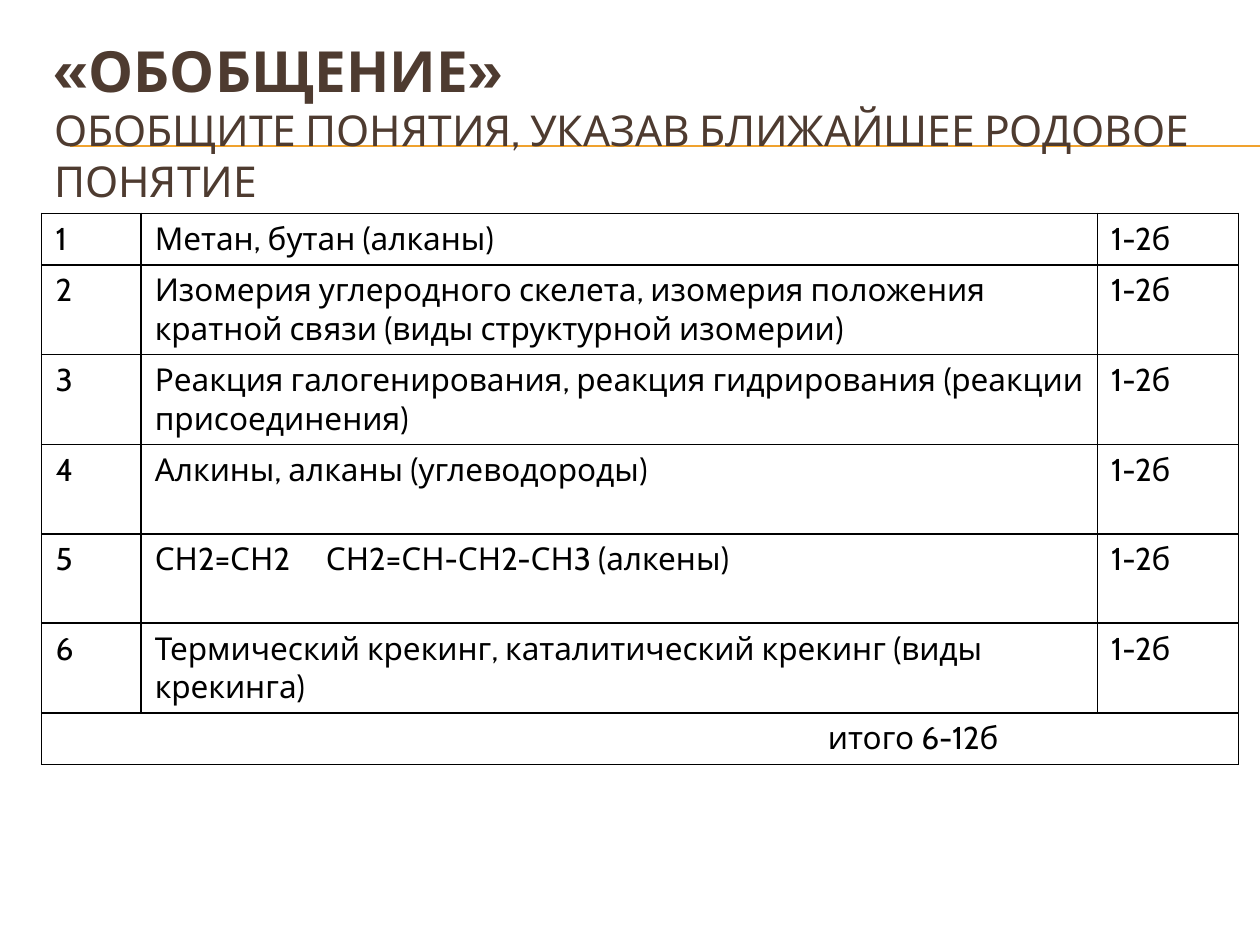
from dataclasses import dataclass
from lxml import etree
from pptx import Presentation
from pptx import util as u
from pptx.dml.color import RGBColor
from pptx.enum import shapes, text
from pptx.oxml import ns


@dataclass
class Theme:
    font: str = "Cabin"
    ink: str = "000000"
    brown: str = "4E3B30"
    gold: str = "F0A22E"
    head: float = 32.4
    sub: float = 24.3
    cell: float = 18


class Deck:
    """Holds the theme and the current slide, and draws its elements."""

    def __init__(self, theme):
        self.theme = theme
        self.prs = Presentation()
        self.prs.slide_width, self.prs.slide_height = u.Cm(25.4), u.Cm(19.05)
        self.slide = self.prs.slides.add_slide(self.prs.slide_layouts[5])

    def run(self, para, words, size, color, bold=False):
        run = para.add_run()
        run.text = words
        font = run.font
        font.name, font.size, font.bold = self.theme.font, u.Pt(size), bold
        font.color.rgb = RGBColor.from_string(color)

    def rule(self, left, top, right):
        tree = self.slide.shapes
        line = tree.add_connector(shapes.MSO_CONNECTOR.STRAIGHT,
                                  u.Cm(left), u.Cm(top), u.Cm(right), u.Cm(top))
        line.line.color.rgb = RGBColor.from_string(self.theme.gold)
        line.line.width = u.Pt(0.75)
        etree.SubElement(line.element.spPr, ns.qn("a:effectLst"))
        tree.element.insert(2, line.element)

    def title(self, box, head, sub):
        shape = self.slide.shapes.title
        shape.left, shape.top, shape.width, shape.height = map(u.Cm, box)
        frame = shape.text_frame
        frame.word_wrap = True
        frame.auto_size = text.MSO_AUTO_SIZE.NONE
        frame.vertical_anchor = text.MSO_ANCHOR.MIDDLE
        para = frame.paragraphs[0]
        para.alignment, para.line_spacing = text.PP_ALIGN.LEFT, 1.0
        self.run(para, head, self.theme.head, self.theme.brown, True)
        para.add_line_break()
        self.run(para, sub, self.theme.sub, self.theme.brown)

    def frame(self, cell):
        props = cell._tc.get_or_add_tcPr()
        for side in ("lnL", "lnR", "lnT", "lnB"):
            edge = etree.SubElement(props, ns.qn(f"a:{side}"), w=str(u.Pt(1)))
            fill = etree.SubElement(edge, ns.qn("a:solidFill"))
            etree.SubElement(fill, ns.qn("a:srgbClr"), val=self.theme.ink)
        cell.fill.background()

    def fill(self, cell, words, indent=0, tab=None):
        cell.margin_left, cell.margin_right = u.Cm(0.28), u.Cm(0.25)
        cell.margin_top = cell.margin_bottom = u.Cm(0.13)
        para = cell.text_frame.paragraphs[0]
        props = para._p.get_or_add_pPr()
        props.set("marL", str(u.Cm(indent)))
        if tab:
            stops = etree.SubElement(props, ns.qn("a:tabLst"))
            etree.SubElement(stops, ns.qn("a:tab"), pos=str(u.Cm(tab)), algn="l")
        self.run(para, words, self.theme.cell, self.theme.ink)

    def table(self, left, top, cols, rows, tasks, mark, total):
        grid = self.slide.shapes.add_table(
            len(rows), len(cols), u.Cm(left), u.Cm(top),
            u.Cm(sum(cols)), u.Cm(sum(rows))).table
        grid.first_row = grid.horz_banding = False
        for col, width in zip(grid.columns, cols):
            col.width = u.Cm(width)
        for row, height in zip(grid.rows, rows):
            row.height = u.Cm(height)
        for cell in grid.iter_cells():
            self.frame(cell)
        for i, task in enumerate(tasks):
            self.fill(grid.cell(i, 0), str(i + 1))
            self.fill(grid.cell(i, 1), task, tab=3.45 if "\t" in task else None)
            self.fill(grid.cell(i, 2), mark)
        last = len(tasks)
        grid.cell(last, 0).merge(grid.cell(last, len(cols) - 1))
        self.fill(grid.cell(last, 0), total, indent=15.57)


TASKS = [
    "Метан, бутан (алканы)",
    "Изомерия углеродного скелета, изомерия положения кратной связи "
    "(виды структурной изомерии)",
    "Реакция галогенирования, реакция гидрирования (реакции присоединения)",
    "Алкины, алканы (углеводороды)",
    "СН2=СН2\tСН2=СН-СН2-СН3 (алкены)",
    "Термический крекинг, каталитический крекинг (виды крекинга)",
]


def main():
    deck = Deck(Theme())
    for top in (2.93, 2.95):
        deck.rule(1.42, top, 25.4)
    deck.title((0.84, 1.27, 24.13, 2.34), "«ОБОБЩЕНИЕ»",
               "ОБОБЩИТЕ ПОНЯТИЯ, УКАЗАВ БЛИЖАЙШЕЕ РОДОВОЕ ПОНЯТИЕ")
    deck.table(0.84, 4.3, (2, 19.28, 2.85), (1.04, *[1.8] * 5, 1.04),
               TASKS, "1-2б", "итого 6-12б")
    deck.prs.save("out.pptx")


if __name__ == "__main__":
    main()
